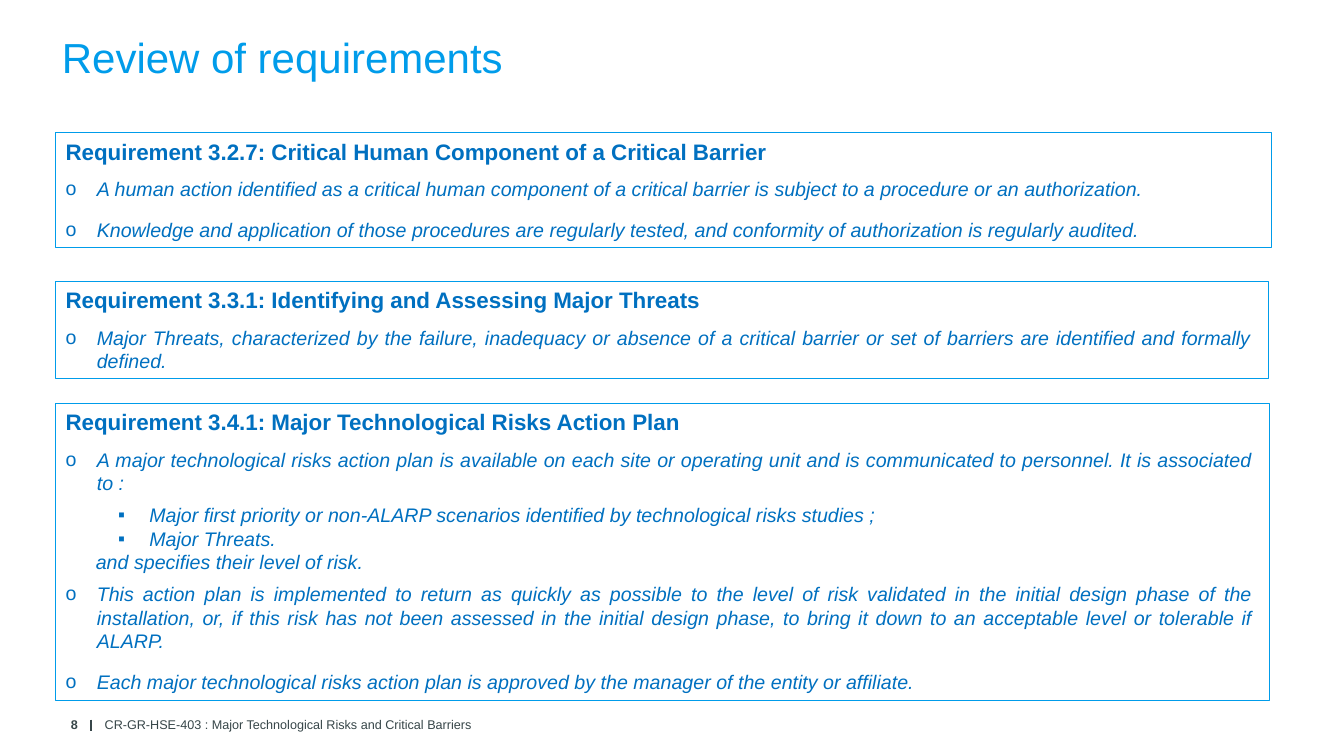
from lxml import etree
from pptx import Presentation
from pptx.dml.color import RGBColor
from pptx.enum.shapes import MSO_CONNECTOR as Connector, MSO_SHAPE as Preset
from pptx.enum.text import MSO_ANCHOR as Anchor, PP_ALIGN as Align
from pptx.oxml.ns import qn
from pptx.util import Pt

COLORS = {"title": "009CEA", "text": "0070C0", "footer": "374649"}
FONT = "Arial"
BOX_LEFT = 39.8

STYLES = {
    "heading": {"size": 16, "bold": True, "before": 6, "after": 3},
    "item": {"bullet": "o", "margin": 22.3, "indent": -22.3, "before": 6, "after": 6},
    "subitem": {"bullet": "▪", "margin": 59.8, "indent": -22.3},
    "continuation": {"margin": 21.6},
}

REQUIREMENTS = [
    (95, 868.3, 82.1, [
        ("heading", "Requirement 3.2.7: Critical Human Component of a Critical Barrier"),
        ("item", "A human action identified as a critical human component of a critical barrier "
                 "is subject to a procedure or an authorization."),
        ("item", "Knowledge and application of those procedures are regularly tested, and "
                 "conformity of authorization is regularly audited."),
    ]),
    (200.9, 866.2, 69.5, [
        ("heading", "Requirement 3.3.1: Identifying and Assessing Major Threats"),
        ("item", "Major Threats, characterized by the failure, inadequacy or absence of a critical "
                 "barrier or set of barriers are identified and formally defined."),
    ]),
    (288, 866.9, 212.7, [
        ("heading", "Requirement 3.4.1: Major Technological Risks Action Plan"),
        ("item", "A major technological risks action plan is available on each site or operating "
                 "unit and is communicated to personnel. It is associated to :"),
        ("subitem", "Major first priority or non-ALARP scenarios identified by technological "
                    "risks studies ;"),
        ("subitem", "Major Threats."),
        ("continuation", "and specifies their level of risk."),
        ("item", "This action plan is implemented to return as quickly as possible to the level of "
                 "risk validated in the initial design phase of the installation, or, if this risk "
                 "has not been assessed in the initial design phase, to bring it down to an "
                 "acceptable level or tolerable if ALARP."),
        ("item", "Each major technological risks action plan is approved by the manager of the "
                 "entity or affiliate."),
    ]),
]


def rgb(name):
    return RGBColor.from_string(COLORS[name])


def format_runs(paragraph, size, color, bold=False, italic=False):
    for run in paragraph.runs:
        run.font.name = FONT
        run.font.size = Pt(size)
        run.font.bold = bold
        run.font.italic = italic
        run.font.color.rgb = rgb(color)


def set_bullet(paragraph, style):
    properties = paragraph._p.get_or_add_pPr()
    properties.set("marL", str(Pt(style.get("margin", 0))))
    properties.set("indent", str(Pt(style.get("indent", 0))))
    if "bullet" in style:
        etree.SubElement(properties, qn("a:buFont")).set("typeface", FONT)
        etree.SubElement(properties, qn("a:buChar")).set("char", style["bullet"])
    else:
        etree.SubElement(properties, qn("a:buNone"))


def fill_paragraph(paragraph, kind, text, first):
    style = STYLES[kind]
    set_bullet(paragraph, style)
    paragraph.text = text
    paragraph.alignment = Align.JUSTIFY
    paragraph.line_spacing = 1.0
    paragraph.space_before = Pt(0 if first else style.get("before", 0))
    paragraph.space_after = Pt(style.get("after", 0))
    bold = style.get("bold", False)
    format_runs(paragraph, style.get("size", 14), "text", bold, not bold)


def add_requirement(slide, top, width, height, entries):
    box = slide.shapes.add_shape(Preset.RECTANGLE, Pt(BOX_LEFT), Pt(top), Pt(width), Pt(height))
    box.shadow.inherit = False
    box.fill.background()
    box.line.color.rgb = rgb("title")
    box.line.width = Pt(0.75)
    frame = box.text_frame
    frame.word_wrap = True
    frame.vertical_anchor = Anchor.TOP
    frame.margin_right = Pt(11.5)
    for index, (kind, text) in enumerate(entries):
        paragraph = frame.add_paragraph() if index else frame.paragraphs[0]
        fill_paragraph(paragraph, kind, text, index == 0)


def set_title(slide, text):
    title = slide.shapes.title
    title.left, title.top, title.width, title.height = Pt(37), Pt(18), Pt(765.4), Pt(45.4)
    frame = title.text_frame
    frame.text = text
    frame.vertical_anchor = Anchor.MIDDLE
    frame.paragraphs[0].alignment = Align.LEFT
    format_runs(frame.paragraphs[0], 30, "title")


def add_footer_text(slide, left, width, text, alignment, bold=False):
    box = slide.shapes.add_textbox(Pt(left), Pt(507.6), Pt(width), Pt(20.2))
    frame = box.text_frame
    frame.word_wrap = True
    frame.vertical_anchor = Anchor.MIDDLE
    frame.text = text
    frame.paragraphs[0].alignment = alignment
    format_runs(frame.paragraphs[0], 9, "footer", bold)


def add_footer_divider(slide):
    divider = slide.shapes.add_connector(Connector.STRAIGHT, Pt(65), Pt(514), Pt(65), Pt(522))
    divider.line.color.rgb = rgb("footer")
    divider.line.width = Pt(1)
    etree.SubElement(divider._element.spPr, qn("a:effectLst"))


def main():
    presentation = Presentation()
    presentation.slide_width = Pt(960)
    presentation.slide_height = Pt(540)
    slide = presentation.slides.add_slide(presentation.slide_layouts[5])
    set_title(slide, "Review of requirements")
    for requirement in REQUIREMENTS:
        add_requirement(slide, *requirement)
    add_footer_divider(slide)
    add_footer_text(slide, 17.3, 45.4, "8", Align.RIGHT, bold=True)
    add_footer_text(slide, 67.7, 838.8,
                    "CR-GR-HSE-403 : Major Technological Risks and Critical Barriers", Align.LEFT)
    presentation.save("out.pptx")


if __name__ == "__main__":
    main()
